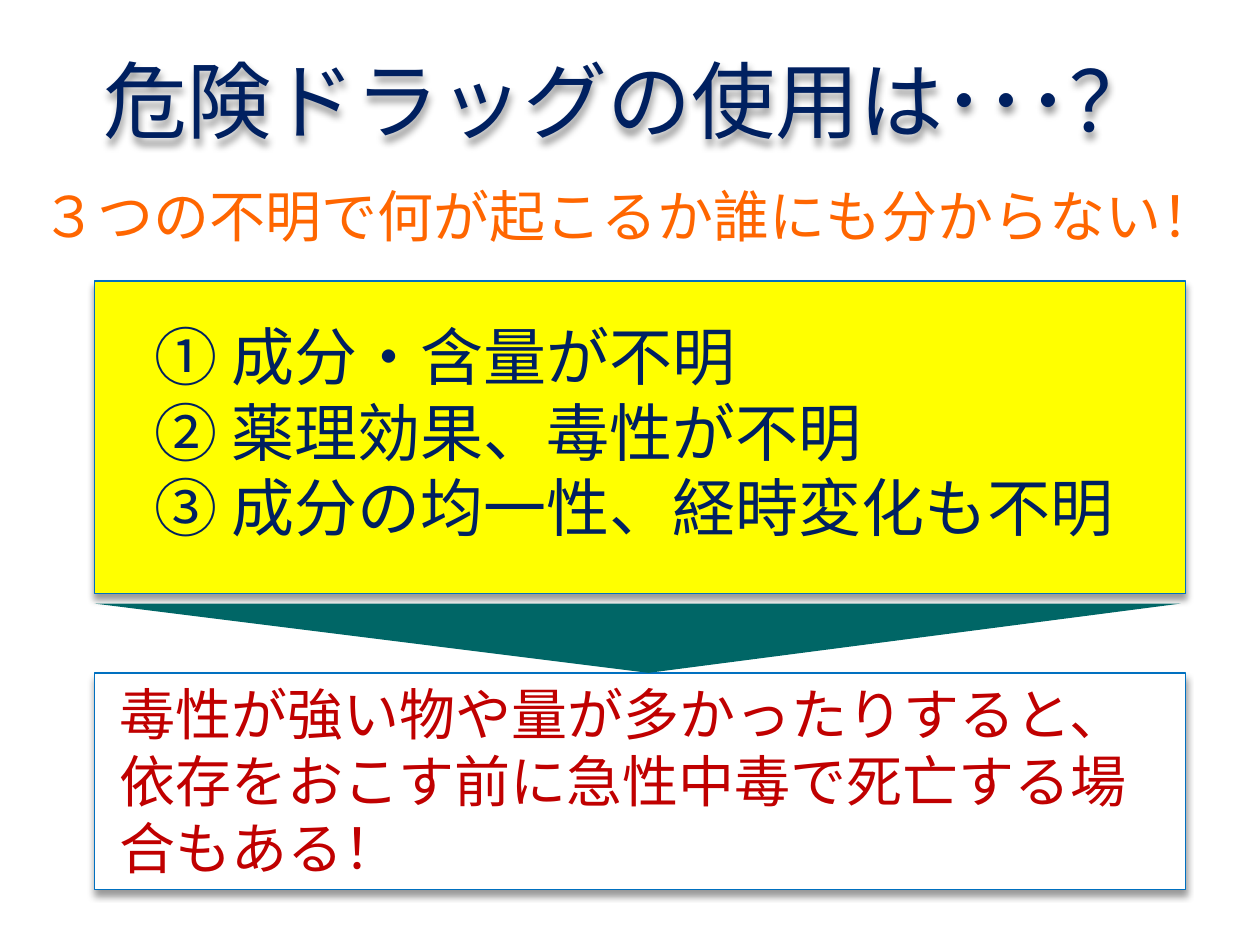
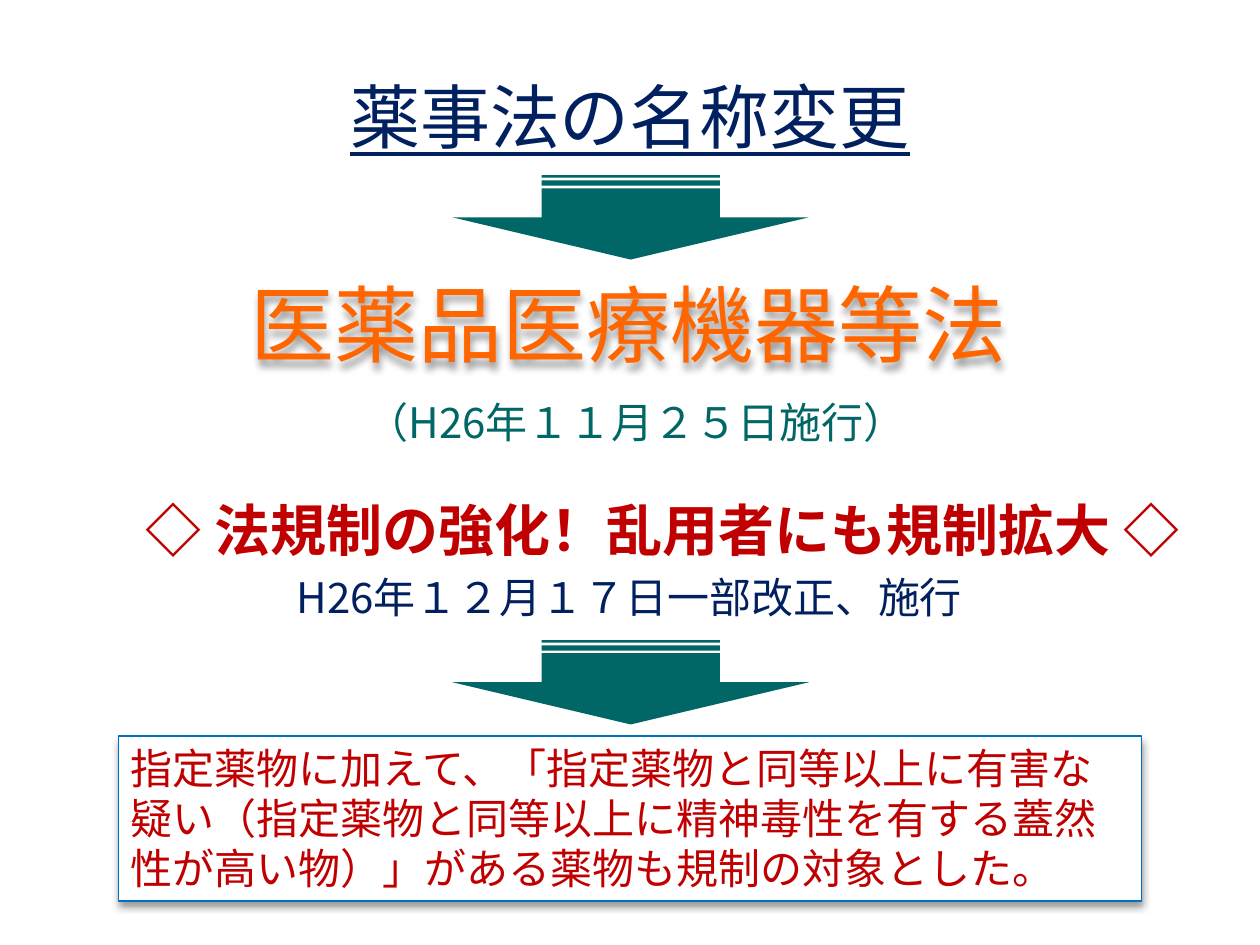
from lxml.etree import SubElement
from pptx import Presentation
from pptx.dml.color import RGBColor
from pptx.enum.shapes import MSO_SHAPE
from pptx.enum.text import MSO_ANCHOR, PP_ALIGN
from pptx.oxml.ns import qn
from pptx.util import Inches, Pt

FONT = "Noto Sans CJK JP"
COLORS = {
    "navy": "002060",
    "orange": "FF6600",
    "red": "C00000",
    "teal": "006666",
    "yellow": "FFFF00",
    "white": "FFFFFF",
    "border": "0070C0",
    "shadow": "000000",
}


def rgb(name):
    return RGBColor.from_string(COLORS[name])


def add_shadow(sp):
    """Drop a soft shadow straight down; without a fill it falls from the text."""
    sp.shadow.inherit = False
    effects = sp._element.spPr.find(qn("a:effectLst"))
    outer = SubElement(effects, qn("a:outerShdw"), blurRad=str(Pt(4)),
                       dist=str(Pt(3)), dir="5400000", algn="t", rotWithShape="0")
    color = SubElement(outer, qn("a:srgbClr"), val=COLORS["shadow"])
    SubElement(color, qn("a:alpha"), val="40000")


def write(sp, lines, size, color, align=PP_ALIGN.LEFT, anchor=MSO_ANCHOR.TOP,
          wrap=True, bold=False, underline=False):
    tf = sp.text_frame
    tf.word_wrap = wrap
    tf.vertical_anchor = anchor
    for i, line in enumerate(lines):
        p = tf.add_paragraph() if i else tf.paragraphs[0]
        p.alignment = align
        r = p.add_run()
        r.text = line
        font = r.font
        font.name, font.size, font.color.rgb = FONT, Pt(size), rgb(color)
        font.bold, font.underline = bold, underline
        SubElement(r._r.get_or_add_rPr(), qn("a:ea"), typeface=FONT)


def add_text(s, x, y, w, h, lines, size, color, **style):
    sp = s.shapes.add_textbox(Inches(x), Inches(y), Inches(w), Inches(h))
    write(sp, lines, size, color, **style)
    return sp


def add_centered(s, x, y, w, h, line, size, color, **style):
    return add_text(s, x, y, w, h, [line], size, color,
                    align=PP_ALIGN.CENTER, **style)


def add_headline(s, y, line, color):
    add_shadow(add_centered(s, -0.02, y, 10.02, 1.53, line, 48, color,
                            anchor=MSO_ANCHOR.MIDDLE))


def add_panel(s, x, y, w, h, fill):
    sp = s.shapes.add_shape(MSO_SHAPE.RECTANGLE, Inches(x), Inches(y),
                            Inches(w), Inches(h))
    sp.fill.solid()
    sp.fill.fore_color.rgb = rgb(fill)
    sp.line.color.rgb = rgb("border")
    sp.line.width = Pt(1)
    add_shadow(sp)
    return sp


def add_pointer(s, kind, x, y, w, h, rotation):
    sp = s.shapes.add_shape(kind, Inches(x), Inches(y), Inches(w), Inches(h))
    sp.rotation = rotation
    sp.fill.solid()
    sp.fill.fore_color.rgb = rgb("teal")
    sp.line.fill.background()
    sp.shadow.inherit = False
    return sp


def build_risks(s):
    x, w = 0.75, 8.66
    add_panel(s, x, 2.23, w, 2.48, "yellow")
    add_text(s, 1.13, 2.47, 8.24, 1.92,
             ["① 成分・含量が不明",
              "② 薬理効果、毒性が不明",
              "③ 成分の均一性、経時変化も不明"], 36, "navy")
    warning = add_panel(s, x, 5.34, w, 1.72, "white")
    write(warning, ["毒性が強い物や量が多かったりすると、",
                    "依存をおこす前に急性中毒で死亡する場",
                    "合もある！"], 32, "red")
    warning.text_frame.margin_left = Inches(0.2)
    add_centered(s, 0, 1.39, 10, 0.64,
                 "３つの不明で何が起こるか誰にも分からない！", 32, "orange")
    wedge = add_pointer(s, MSO_SHAPE.ISOSCELES_TRIANGLE, x, 4.79, 8.62, 0.55, 180)
    wedge.adjustments[0] = 0.49
    add_headline(s, 0.02, "危険ドラッグの使用は･･･？", "navy")


def build_law_change(s):
    add_centered(s, 0.5, 0.34, 9, 1.15, "薬事法の名称変更", 40, "navy",
                 anchor=MSO_ANCHOR.MIDDLE, underline=True)
    for y in (0.31, 4):
        add_pointer(s, MSO_SHAPE.STRIPED_RIGHT_ARROW, 4.67, y, 0.67, 2.83, 90)
    add_headline(s, 1.8, "医薬品医療機器等法", "orange")
    add_centered(s, 2.11, 3.1, 5.88, 0.5, "（H26年１１月２５日施行）", 24, "teal")
    add_text(s, 1.06, 3.88, 8.57, 0.64,
             ["◇ 法規制の強化！乱用者にも規制拡大 ◇"], 32, "red",
             wrap=False, bold=True)
    add_centered(s, 1.52, 4.49, 6.95, 0.5,
                 "H26年１２月１７日一部改正、施行", 24, "navy")
    rule = add_panel(s, 0.94, 5.84, 8.12, 1.31, "white")
    write(rule, ["指定薬物に加えて、「指定薬物と同等以上に有害な"
                 "疑い（指定薬物と同等以上に精神毒性を有する蓋然"
                 "性が高い物）」がある薬物も規制の対象とした。"], 24, "red")


def main():
    prs = Presentation()
    prs.slide_width, prs.slide_height = Inches(10), Inches(7.5)
    for build in (build_risks, build_law_change):
        build(prs.slides.add_slide(prs.slide_layouts[6]))
    prs.save("out.pptx")


if __name__ == "__main__":
    main()
